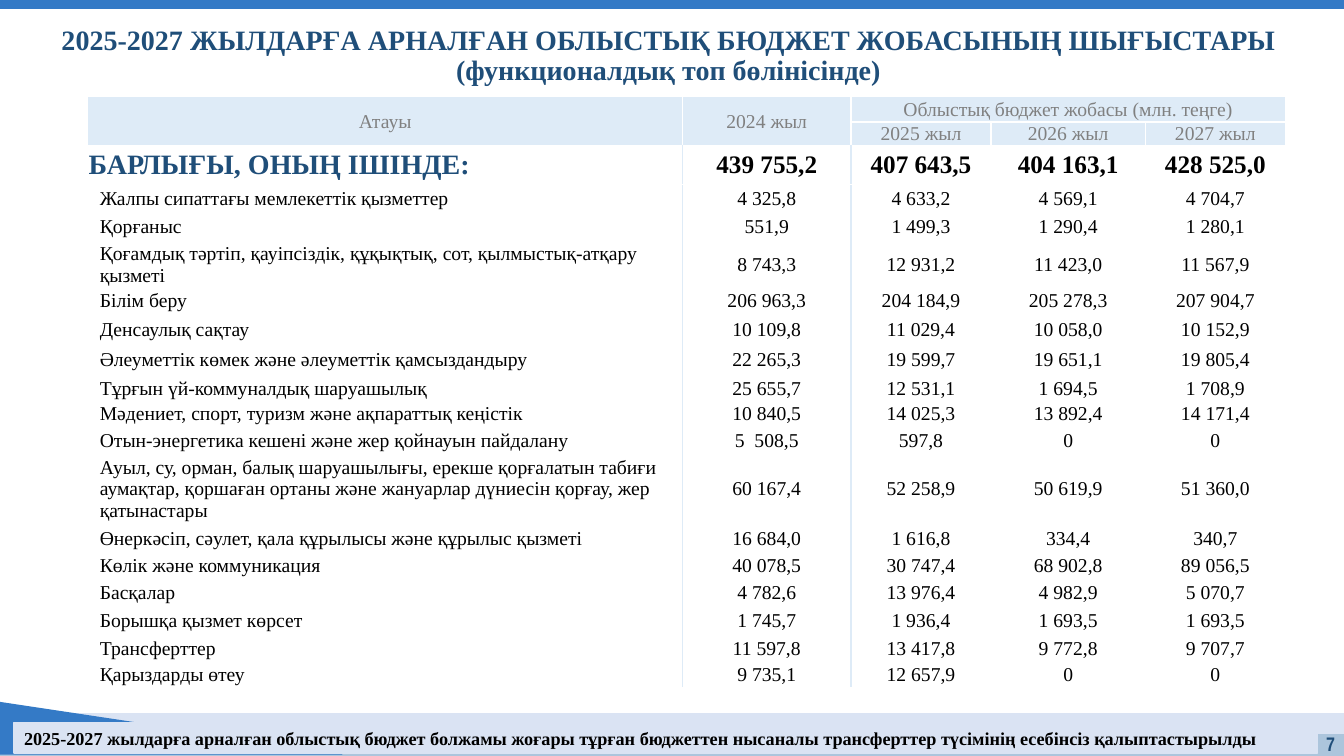
from lxml import etree
from pptx import Presentation
from pptx import util as u
from pptx.dml.color import RGBColor
from pptx.enum import shapes, text
from pptx.oxml.ns import qn

EMU_PER_PX = 9144
SERIF = "Times New Roman"
NARROW = "Arial Narrow"
NO_STYLE = "{2D5ABB26-0587-4C30-8999-92F81FD0307C}"

BLUE = RGBColor(0x34, 0x7A, 0xC6)
STEEL = RGBColor(0xAC, 0xC5, 0xDC)
PALE = RGBColor(0xDA, 0xE3, 0xF3)
HEADER = RGBColor(0xDE, 0xEB, 0xF7)
NAVY = RGBColor(0x1F, 0x4E, 0x79)
GRAY = RGBColor(0x80, 0x80, 0x80)
BLACK = RGBColor(0, 0, 0)
WHITE = RGBColor(255, 255, 255)

LEFT, CENTER, RIGHT = text.PP_ALIGN.LEFT, text.PP_ALIGN.CENTER, text.PP_ALIGN.RIGHT
RECT = shapes.MSO_SHAPE.RECTANGLE

TITLE = [
    "2025-2027 ЖЫЛДАРҒА АРНАЛҒАН ОБЛЫСТЫҚ БЮДЖЕТ ЖОБАСЫНЫҢ ШЫҒЫСТАРЫ",
    "(функционалдық топ бөлінісінде)",
]
FOOTNOTE = (
    "2025-2027 жылдарға арналған облыстық бюджет болжамы жоғары тұрған бюджеттен "
    "нысаналы трансферттер түсімінің есебінсіз қалыптастырылды"
)
COLUMNS = [590, 167, 139, 153, 139]
HEADER_HEIGHTS = [25, 23]
HEADERS = [
    (0, 0, 1, 0, "Атауы"),
    (0, 1, 1, 1, "2024 жыл"),
    (0, 2, 0, 4, "Облыстық бюджет жобасы (млн. теңге)"),
    (1, 2, 1, 2, "2025 жыл"),
    (1, 3, 1, 3, "2026 жыл"),
    (1, 4, 1, 4, "2027 жыл"),
]
EXPENSES = [
    (39, "БАРЛЫҒЫ, ОНЫҢ ІШІНДЕ:", "439 755,2", "407 643,5", "404 163,1", "428 525,0"),
    (27, "Жалпы сипаттағы мемлекеттік қызметтер", "4 325,8", "4 633,2", "4 569,1", "4 704,7"),
    (30, "Қорғаныс", "551,9", "1 499,3", "1 290,4", "1 280,1"),
    (42, "Қоғамдық тәртіп, қауіпсіздік, құқықтық, сот, қылмыстық-атқару қызметі",
     "8 743,3", "12 931,2", "11 423,0", "11 567,9"),
    (29, "Білім беру", "206 963,3", "204 184,9", "205 278,3", "207 904,7"),
    (28, "Денсаулық сақтау", "10 109,8", "11 029,4", "10 058,0", "10 152,9"),
    (32, "Әлеуметтiк көмек және әлеуметтiк қамсыздандыру",
     "22 265,3", "19 599,7", "19 651,1", "19 805,4"),
    (24, "Тұрғын үй-коммуналдық шаруашылық", "25 655,7", "12 531,1", "1 694,5", "1 708,9"),
    (27, "Мәдениет, спорт, туризм және ақпараттық кеңістiк",
     "10 840,5", "14 025,3", "13 892,4", "14 171,4"),
    (26, "Отын-энергетика кешенi және жер қойнауын пайдалану", "5  508,5", "597,8", "0", "0"),
    (70, "Ауыл, су, орман, балық шаруашылығы, ерекше қорғалатын табиғи аумақтар, "
     "қоршаған ортаны және жануарлар дүниесін қорғау, жер қатынастары",
     "60 167,4", "52 258,9", "50 619,9", "51 360,0"),
    (28, "Өнеркәсіп, сәулет, қала құрылысы және құрылыс қызметі",
     "16 684,0", "1 616,8", "334,4", "340,7"),
    (27, "Көлiк және коммуникация", "40 078,5", "30 747,4", "68 902,8", "89 056,5"),
    (26, "Басқалар", "4 782,6", "13 976,4", "4 982,9", "5 070,7"),
    (29, "Борышқа қызмет көрсет", "1 745,7", "1 936,4", "1 693,5", "1 693,5"),
    (27, "Трансферттер", "11 597,8", "13 417,8", "9 772,8", "9 707,7"),
    (25, "Қарыздарды өтеу", "9 735,1", "12 657,9", "0", "0"),
]


def px(length):
    return u.Emu(length * EMU_PER_PX)


class BudgetSlide:
    def __init__(self, deck):
        self.page = deck.slides.add_slide(deck.slide_layouts[0])
        subtitle = self.page.placeholders[1].element
        subtitle.getparent().remove(subtitle)

    def style(self, para, size, color, bold=False, align=LEFT, font=SERIF):
        para.alignment = align
        para.font.name = font
        para.font.size = u.Pt(size)
        para.font.bold = bold
        para.font.color.rgb = color

    def title(self, left, top, width, height, lines):
        box = self.page.shapes.title
        box.left, box.top, box.width, box.height = map(px, (left, top, width, height))
        frame = box.text_frame
        frame.auto_size = text.MSO_AUTO_SIZE.NONE
        frame.vertical_anchor = text.MSO_ANCHOR.MIDDLE
        para = frame.paragraphs[0]
        for index, line in enumerate(lines):
            if index:
                para.add_line_break()
            para.add_run().text = line
        para.line_spacing = 0.9
        self.style(para, 20, NAVY, True, CENTER)

    def shape(self, kind, left, top, width, height, color):
        shape = self.page.shapes.add_shape(kind, *map(px, (left, top, width, height)))
        shape.shadow.inherit = False
        shape.fill.solid()
        shape.fill.fore_color.rgb = color
        shape.line.color.rgb = color
        shape.line.width = u.Pt(1)
        return shape

    def label(self, box, words, *style):
        frame = box.text_frame
        frame.word_wrap = True
        frame.vertical_anchor = text.MSO_ANCHOR.MIDDLE
        frame.text = words
        self.style(frame.paragraphs[0], *style)

    def textbox(self, left, top, width, height, words, *style):
        box = self.page.shapes.add_textbox(*map(px, (left, top, width, height)))
        self.label(box, words, *style)
        box.text_frame.paragraphs[0].line_spacing = 0.9

    def table(self, left, top, columns, heights):
        area = map(px, (left, top, sum(columns), sum(heights)))
        grid = self.page.shapes.add_table(len(heights), len(columns), *area).table
        grid.first_row = grid.horz_banding = False
        grid._tbl.tblPr.find(qn("a:tableStyleId")).text = NO_STYLE
        for column, width in zip(grid.columns, columns):
            column.width = px(width)
        for row, height in zip(grid.rows, heights):
            row.height = px(height)
        return grid

    def cell(self, cell, words, style, indent=1, fill=None, borders=None):
        cell.margin_left = px(indent)
        cell.margin_top = cell.margin_right = px(1)
        cell.margin_bottom = 0
        cell.vertical_anchor = text.MSO_ANCHOR.MIDDLE
        cell.text = words
        self.style(cell.text_frame.paragraphs[0], *style)
        self.finish(cell, fill, borders or {})

    def finish(self, cell, fill, borders):
        properties = cell._tc.get_or_add_tcPr()
        for side in "LRTB":
            if side in borders:
                line = etree.SubElement(properties, qn(f"a:ln{side}"), w=str(u.Pt(1)))
                solid = etree.SubElement(line, qn("a:solidFill"))
                etree.SubElement(solid, qn("a:srgbClr"), val=str(borders[side]))
        if fill is None:
            cell.fill.background()
        else:
            cell.fill.solid()
            cell.fill.fore_color.rgb = fill

    def expenses(self, left, top):
        heights = HEADER_HEIGHTS + [row[0] for row in EXPENSES]
        grid = self.table(left, top, COLUMNS, heights)
        frame = dict.fromkeys("LRTB", WHITE)
        for row, column, last_row, last_column, words in HEADERS:
            cell = grid.cell(row, column)
            if (row, column) != (last_row, last_column):
                cell.merge(grid.cell(last_row, last_column))
            self.cell(cell, words, (14, GRAY, False, CENTER), fill=HEADER, borders=frame)
        for row, (_, name, *values) in enumerate(EXPENSES, len(HEADER_HEIGHTS)):
            total = row == len(HEADER_HEIGHTS)
            name_style = (20, NAVY, True) if total else (14, BLACK)
            value_style = (18 if total else 14, BLACK, total, CENTER)
            self.cell(grid.cell(row, 0), name, name_style, 1 if total else 12,
                      borders={"R": HEADER})
            for column, value in enumerate(values, 1):
                borders = {"L": HEADER} if column == 1 else {}
                if total:
                    borders["T"] = WHITE
                self.cell(grid.cell(row, column), value, value_style, borders=borders)


def main():
    deck = Presentation()
    deck.slide_width, deck.slide_height = px(1333), px(750)
    slide = BudgetSlide(deck)
    slide.shape(RECT, 0, 727, 1333, 23, STEEL)
    slide.shape(RECT, 0, 708, 1333, 20, PALE)
    slide.shape(shapes.MSO_SHAPE.RIGHT_TRIANGLE, 0, 697, 339, 51, BLUE)
    slide.title(14, 21, 1298, 70, TITLE)
    slide.shape(RECT, 0, -2, 1333, 10, BLUE)
    slide.expenses(87, 96)
    slide.textbox(1262, 726, 72, 27, "7", 14, NAVY, True, RIGHT, NARROW)
    footer = slide.shape(RECT, 14, 717, 1293, 30, PALE)
    slide.label(footer, FOOTNOTE, 13, BLACK, True)
    deck.save("out.pptx")


if __name__ == "__main__":
    main()
